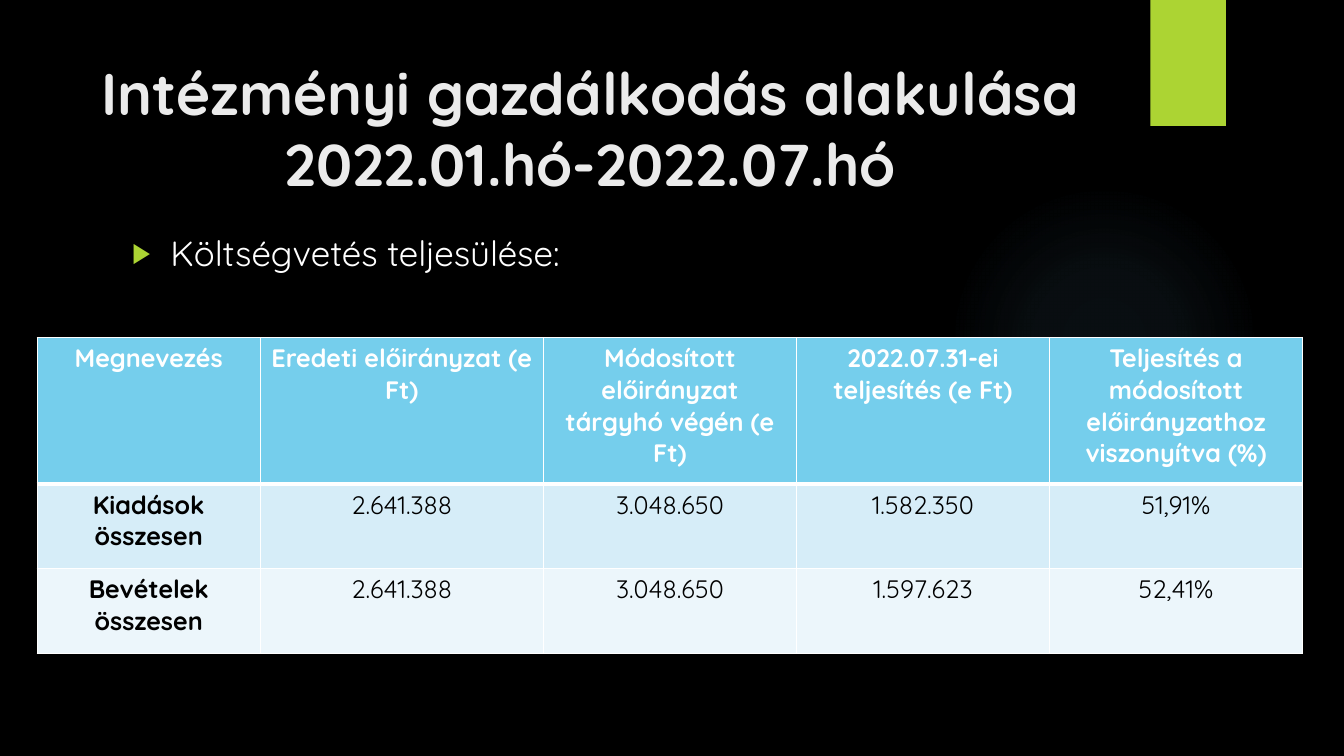
from dataclasses import dataclass

from lxml.etree import SubElement
from pptx import Presentation
from pptx.dml.color import RGBColor
from pptx.enum.shapes import MSO_SHAPE
from pptx.enum.text import MSO_ANCHOR, MSO_AUTO_SIZE, PP_ALIGN
from pptx.oxml import parse_xml
from pptx.oxml.ns import nsdecls, qn
from pptx.util import Inches, Pt


@dataclass(frozen=True)
class Theme:
    font: str = "Quicksand"
    background: str = "000000"
    title: str = "EBEBEB"
    light: str = "FFFFFF"
    dark: str = "000000"
    accent: str = "ACD433"
    glow: str = "7AC4F0"
    header: str = "75CEEC"
    bands: tuple = ("D6EDF8", "ECF6FB")
    title_size: int = 42
    body_size: int = 25
    table_size: int = 18
    thin: int = 1
    thick: int = 3


THEME = Theme()
ROWS = [
    ["Megnevezés", "Eredeti előirányzat (e Ft)",
     "Módosított előirányzat tárgyhó végén (e Ft)",
     "2022.07.31-ei teljesítés (e Ft)",
     "Teljesítés a módosított előirányzathoz viszonyítva (%)"],
    ["Kiadások összesen", "2.641.388", "3.048.650", "1.582.350", "51,91%"],
    ["Bevételek összesen", "2.641.388", "3.048.650", "1.597.623", "52,41%"],
]
COLUMN_WIDTHS = [2.21, 2.81, 2.51, 2.51, 2.51]
ROW_HEIGHTS = [1.45, 0.84, 0.84]


def style_paragraph(para, size, color, bold=False, align=None):
    para.alignment = align
    for span in para.runs:
        span.font.name = THEME.font
        span.font.size = Pt(size)
        span.font.bold = bold
        span.font.color.rgb = RGBColor.from_string(color)


def place(shape, box):
    shape.left, shape.top, shape.width, shape.height = map(Inches, box)


def add_backdrop_shape(page, kind, box):
    """Add a plain shape behind the placeholders."""
    shape = page.shapes.add_shape(kind, *map(Inches, box))
    shape.shadow.inherit = False
    shape.line.fill.background()
    tree = shape.element.getparent()
    tree.insert(2, shape.element)
    return shape


def add_backdrop(page, ribbon_box, glow_box):
    page.background.fill.solid()
    page.background.fill.fore_color.rgb = RGBColor.from_string(THEME.background)

    ribbon = add_backdrop_shape(page, MSO_SHAPE.RECTANGLE, ribbon_box)
    ribbon.fill.solid()
    ribbon.fill.fore_color.rgb = RGBColor.from_string(THEME.accent)

    glow = add_backdrop_shape(page, MSO_SHAPE.OVAL, glow_box)
    stops = "".join(
        f'<a:gs pos="{position * 1000}"><a:srgbClr val="{THEME.glow}">'
        f'<a:alpha val="{alpha * 1000}"/></a:srgbClr></a:gs>'
        for position, alpha in [(0, 7), (36, 6), (69, 0)])
    gradient = parse_xml(
        f'<a:gradFill {nsdecls("a")} rotWithShape="1"><a:gsLst>{stops}</a:gsLst>'
        '<a:path path="circle"><a:fillToRect l="50000" t="50000" r="50000" b="50000"/>'
        '</a:path></a:gradFill>')
    glow.element.spPr.find(qn("a:prstGeom")).addnext(gradient)


def fill_title(title, box):
    place(title, box)
    frame = title.text_frame
    frame.text = "Intézményi gazdálkodás alakulása 2022.01.hó-2022.07.hó"
    frame.auto_size = MSO_AUTO_SIZE.NONE
    frame.vertical_anchor = MSO_ANCHOR.MIDDLE
    style_paragraph(frame.paragraphs[0], THEME.title_size, THEME.title, True,
                    PP_ALIGN.CENTER)


def fill_body(body, box):
    place(body, box)
    frame = body.text_frame
    frame.text = "Költségvetés teljesülése:"
    frame.auto_size = MSO_AUTO_SIZE.NONE
    frame.vertical_anchor = MSO_ANCHOR.TOP
    para = frame.paragraphs[0]
    properties = para._p.get_or_add_pPr()
    indent = Inches(0.38)
    properties.set("marL", str(indent))
    properties.set("indent", str(-indent))
    bullet_color = SubElement(properties, qn("a:buClr"))
    SubElement(bullet_color, qn("a:srgbClr"), val=THEME.accent)
    SubElement(properties, qn("a:buSzPct"), val="80000")
    SubElement(properties, qn("a:buChar"), char="▶")
    para.space_before = Pt(0)
    style_paragraph(para, THEME.body_size, THEME.light)


def set_borders(cell, top, bottom):
    """Draw all four edges; top and bottom are widths in points."""
    properties = cell._tc.get_or_add_tcPr()
    widths = {"L": THEME.thin, "R": THEME.thin, "T": top, "B": bottom}
    for index, (side, width) in enumerate(widths.items()):
        edge = parse_xml(
            f'<a:ln{side} {nsdecls("a")} w="{Pt(width)}"><a:solidFill>'
            f'<a:srgbClr val="{THEME.light}"/></a:solidFill></a:ln{side}>')
        properties.insert(index, edge)


def add_budget_table(page, left, top):
    size = (sum(COLUMN_WIDTHS), sum(ROW_HEIGHTS))
    table = page.shapes.add_table(
        len(ROWS), len(COLUMN_WIDTHS), *map(Inches, (left, top, *size))).table
    for column, width in zip(table.columns, COLUMN_WIDTHS):
        column.width = Inches(width)
    for row, height in zip(table.rows, ROW_HEIGHTS):
        row.height = Inches(height)

    fills = [THEME.header, *THEME.bands]
    for row_index, texts in enumerate(ROWS):
        is_header = row_index == 0
        for column_index, text in enumerate(texts):
            cell = table.cell(row_index, column_index)
            cell.text = text
            cell.fill.solid()
            cell.fill.fore_color.rgb = RGBColor.from_string(fills[row_index])
            style_paragraph(cell.text_frame.paragraphs[0], THEME.table_size,
                            THEME.light if is_header else THEME.dark,
                            is_header or column_index == 0, PP_ALIGN.CENTER)
            set_borders(cell,
                        THEME.thick if row_index == 1 else THEME.thin,
                        THEME.thick if is_header else THEME.thin)


def build_budget_slide(deck):
    page = deck.slides.add_slide(deck.slide_layouts[1])
    add_backdrop(page, (11.41, 0, 0.75, 1.25), (9.41, 1.83, 3.08, 3.08))
    fill_title(page.shapes.title, (0.71, 0.5, 10.29, 1.53))
    fill_body(page.placeholders[1], (1.21, 2.25, 9.78, 4.59))
    add_budget_table(page, 0.37, 3.35)


def main():
    deck = Presentation()
    deck.slide_width = Inches(13.33)
    deck.slide_height = Inches(7.5)
    build_budget_slide(deck)
    deck.save("out.pptx")


if __name__ == "__main__":
    main()
